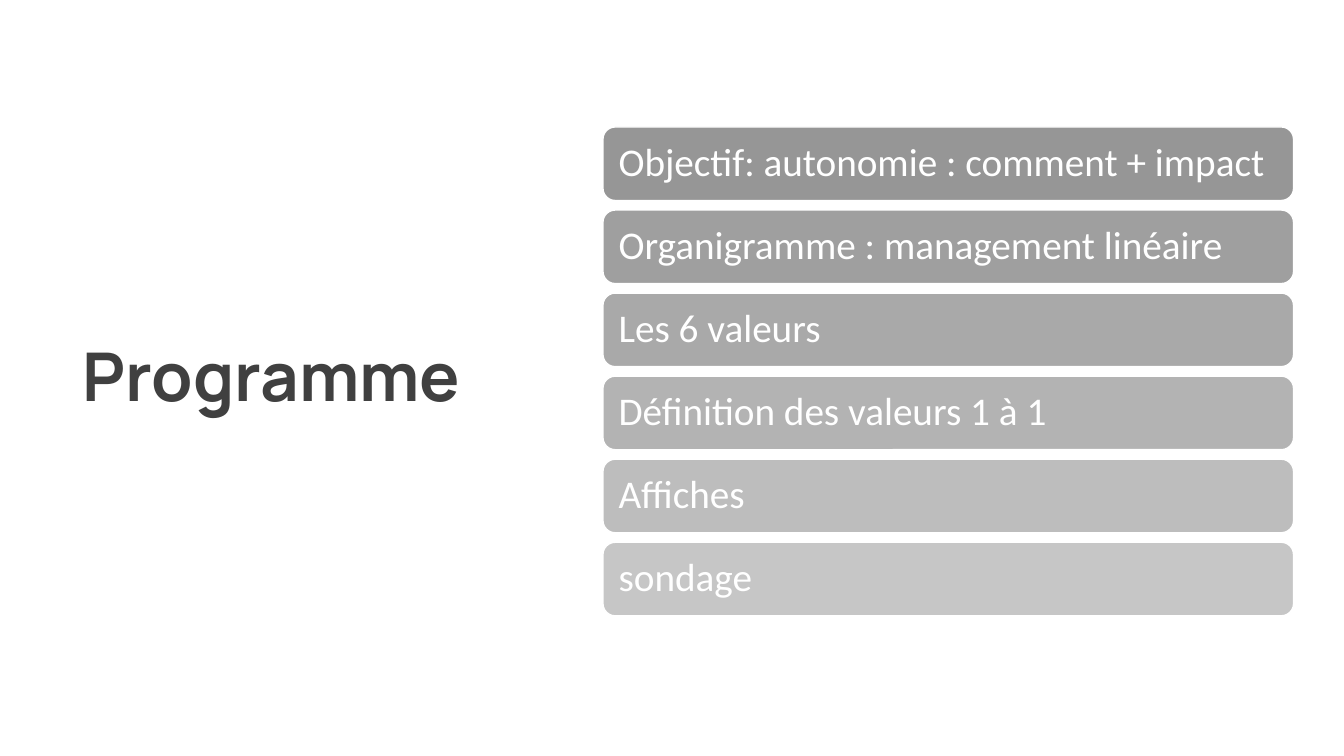
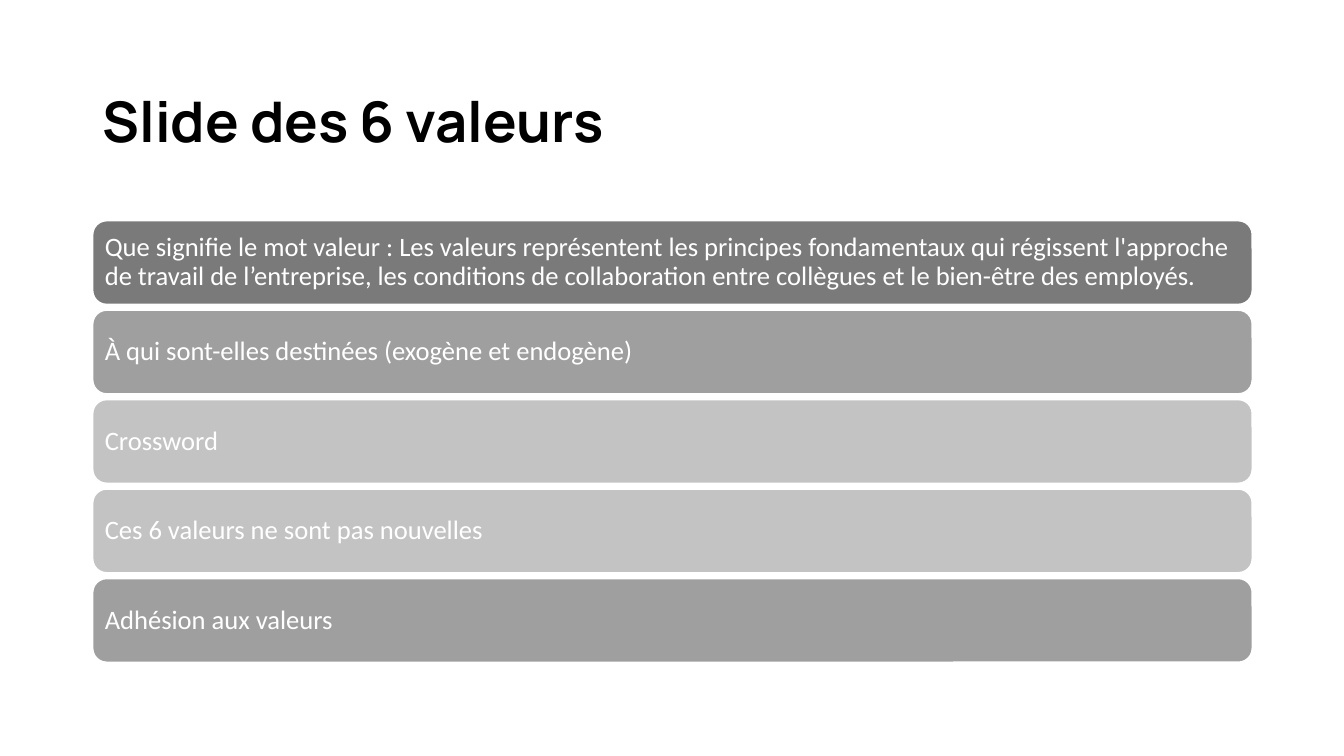
"""Build a two-slide deck: a programme and a list of points on the six values."""
import pptx
import pptx.dml.color
import pptx.enum.shapes
import pptx.enum.text
import pptx.util

Inches = pptx.util.Inches
Anchor = pptx.enum.text.MSO_ANCHOR

THEME = {
    "title_font": "Manrope",
    "body_font": "Calibri",
    "white": "FFFFFF",
    "black": "000000",
    "charcoal": "404040",
    "programme_title": 48,
    "values_title": 40,
    "programme_bar": 28,
    "values_bar": 19,
    "outline": 1,
    "line_spacing": 0.9,
}

SLIDES = [
    {
        "title": "Programme",
        "title_area": (0.72, 3.2, 4.94, 0.98),
        "title_anchor": Anchor.BOTTOM,
        "title_color": "charcoal",
        "title_size": "programme_title",
        "bar_size": "programme_bar",
        "bar_left": 5.98,
        "bar_width": 6.85,
        "bar_height": 0.73,
        "first_top": 1.26,
        "last_top": 5.38,
        "inset": 0.12,
        "bars": [
            ("Objectif: autonomie : comment + impact", "969696"),
            ("Organigramme : management linéaire", "9F9F9F"),
            ("Les 6 valeurs", "A9A9A9"),
            ("Définition des valeurs 1 à 1", "B3B3B3"),
            ("Affiches", "BDBDBD"),
            ("sondage", "C6C6C6"),
        ],
    },
    {
        "title": "Slide des 6 valeurs",
        "title_area": (0.92, 0.61, 11.5, 1.24),
        "title_anchor": Anchor.MIDDLE,
        "title_color": "black",
        "title_size": "values_title",
        "bar_size": "values_bar",
        "bar_left": 0.92,
        "bar_width": 11.5,
        "bar_height": 0.83,
        "first_top": 2.19,
        "last_top": 5.74,
        "inset": 0.08,
        "bars": [
            ("Que signifie le mot valeur : Les valeurs représentent les principes "
             "fondamentaux qui régissent l'approche de travail de l’entreprise, "
             "les conditions de collaboration entre collègues et le bien-être "
             "des employés.", "7A7A7A"),
            ("À qui sont-elles destinées (exogène et endogène)", "9F9F9F"),
            ("Crossword", "C3C3C3"),
            ("Ces 6 valeurs ne sont pas nouvelles", "C3C3C3"),
            ("Adhésion aux valeurs", "9F9F9F"),
        ],
    },
]


def rgb(value):
    return pptx.dml.color.RGBColor.from_string(value)


def write(box, text, font, size, color, anchor, bold=False):
    frame = box.text_frame
    frame.text = text
    frame.word_wrap = True
    frame.vertical_anchor = anchor
    para = frame.paragraphs[0]
    para.alignment = pptx.enum.text.PP_ALIGN.LEFT
    para.line_spacing = THEME["line_spacing"]
    span = para.runs[0]
    span.font.name = THEME[font]
    span.font.size = pptx.util.Pt(THEME[size])
    span.font.color.rgb = rgb(THEME[color])
    span.font.bold = bold


def add_title(page, content):
    box = page.shapes.add_textbox(*map(Inches, content["title_area"]))
    write(box, content["title"], "title_font", content["title_size"],
          content["title_color"], content["title_anchor"], bold=True)


def add_bars(page, content):
    bars = content["bars"]
    pitch = (content["last_top"] - content["first_top"]) / (len(bars) - 1)
    for index, (text, fill) in enumerate(bars):
        area = (content["bar_left"], content["first_top"] + index * pitch,
                content["bar_width"], content["bar_height"])
        bar = page.shapes.add_shape(
            pptx.enum.shapes.MSO_SHAPE.ROUNDED_RECTANGLE, *map(Inches, area))
        bar.shadow.inherit = False
        bar.fill.solid()
        bar.fill.fore_color.rgb = rgb(fill)
        bar.line.color.rgb = rgb(THEME["white"])
        bar.line.width = pptx.util.Pt(THEME["outline"])
        write(bar, text, "body_font", content["bar_size"], "white", Anchor.MIDDLE)
        frame = bar.text_frame
        frame.margin_left = frame.margin_right = Inches(content["inset"])
        frame.margin_top = frame.margin_bottom = Inches(content["inset"])


def main():
    deck = pptx.Presentation()
    deck.slide_width = Inches(13.33)
    deck.slide_height = Inches(7.5)
    for content in SLIDES:
        page = deck.slides.add_slide(deck.slide_layouts[6])
        add_title(page, content)
        add_bars(page, content)
    deck.save("out.pptx")


if __name__ == "__main__":
    main()
